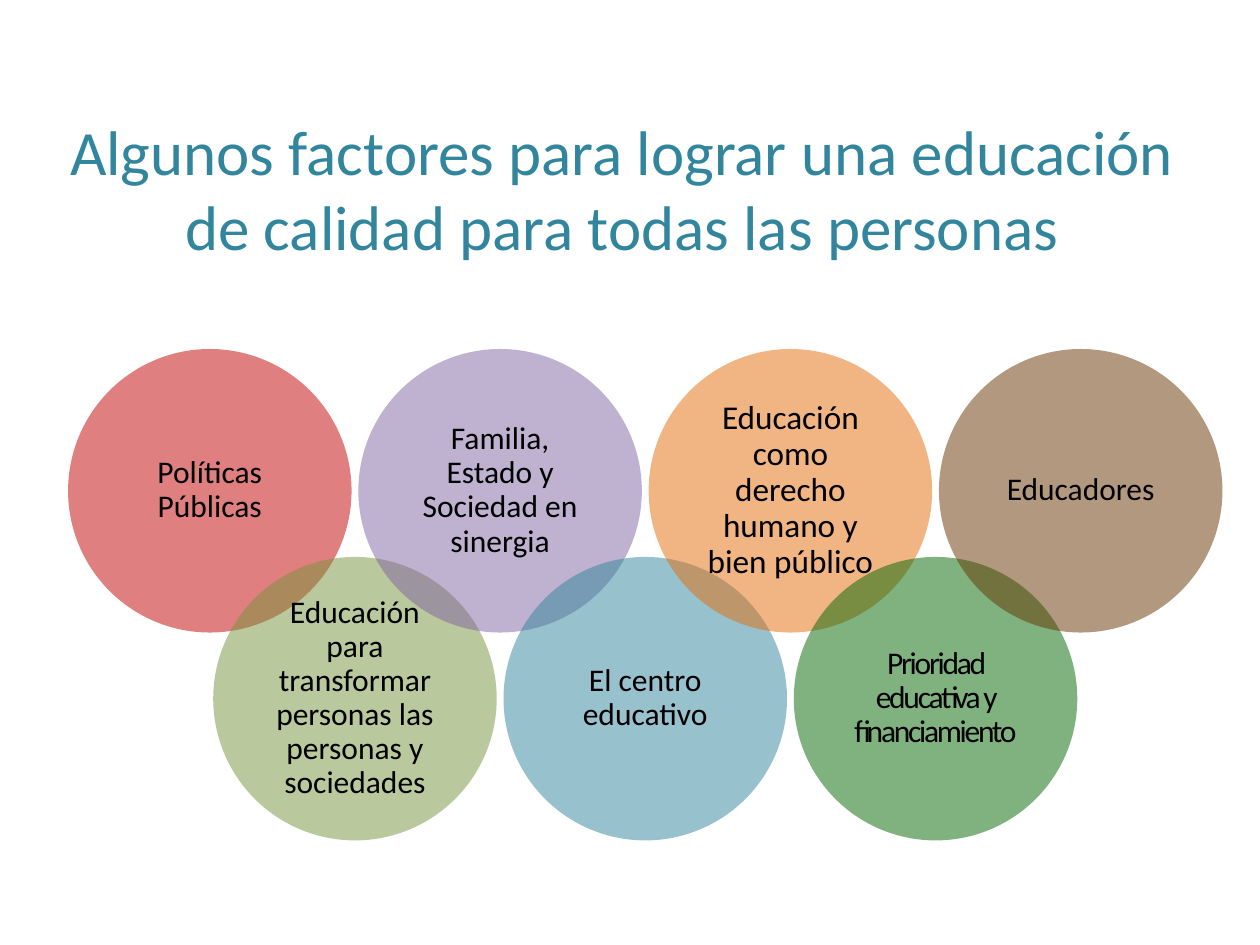
"""Build a slide of overlapping circles naming the factors of quality education."""
from dataclasses import dataclass

from lxml.etree import SubElement
from pptx import Presentation
from pptx.dml.color import RGBColor
from pptx.enum.shapes import MSO_SHAPE
from pptx.enum.text import MSO_ANCHOR, PP_ALIGN
from pptx.oxml.ns import qn
from pptx.slide import Slide
from pptx.text.text import TextFrame
from pptx.util import Inches, Pt

COLORS = {
    "title": "31859C",
    "text": "000000",
    "red": "C00000",
    "olive": "77933C",
    "purple": "8064A2",
    "teal": "31859C",
    "orange": "E46C0A",
    "green": "006600",
    "brown": "663300",
}
DIAMETER = 2.25
FIRST_LEFT = 0.54
STEP = 1.152
ROW_TOPS = (2.77, 4.42)


@dataclass
class Factor:
    label: str
    color: str
    size: float = 18
    inset: float = 0.07
    tracking: float = 0


FACTORS = [
    Factor("Políticas Públicas", "red"),
    Factor("Educación para transformar personas las personas y sociedades", "olive"),
    Factor("Familia, Estado y Sociedad en sinergia", "purple"),
    Factor("El centro educativo", "teal"),
    Factor("Educación como derecho humano y bien público", "orange", size=19, inset=0.08),
    Factor("Prioridad educativa y financiamiento", "green", tracking=-1.3),
    Factor("Educadores", "brown"),
]


def write_text(frame: TextFrame, text: str, *, size: float, color: str,
               inset_x: float = 0.1, inset_y: float = 0.05,
               line_spacing: float = 1.0, tracking: float = 0) -> None:
    """Fill a frame with one centred paragraph."""
    frame.word_wrap = True
    frame.vertical_anchor = MSO_ANCHOR.MIDDLE
    frame.margin_left = frame.margin_right = Inches(inset_x)
    frame.margin_top = frame.margin_bottom = Inches(inset_y)
    paragraph = frame.paragraphs[0]
    paragraph.alignment = PP_ALIGN.CENTER
    paragraph.line_spacing = line_spacing
    run = paragraph.add_run()
    run.text = text
    run.font.name = "Calibri"
    run.font.size = Pt(size)
    run.font.color.rgb = RGBColor.from_string(COLORS[color])
    if tracking:
        run.font._element.set("spc", str(round(tracking * 100)))


def add_factor(slide: Slide, factor: Factor, left: float, top: float) -> None:
    """Draw a half-transparent circle with its label."""
    circle = slide.shapes.add_shape(
        MSO_SHAPE.OVAL, Inches(left), Inches(top), Inches(DIAMETER), Inches(DIAMETER))
    circle.shadow.inherit = False
    circle.line.fill.background()
    circle.fill.solid()
    circle.fill.fore_color.rgb = RGBColor.from_string(COLORS[factor.color])
    tint = circle.fill._xPr.find(qn("a:solidFill")).find(qn("a:srgbClr"))
    SubElement(tint, qn("a:alpha"), val="50000")
    write_text(circle.text_frame, factor.label, size=factor.size, color="text",
               inset_x=factor.inset, inset_y=factor.inset,
               line_spacing=0.9, tracking=factor.tracking)


def main() -> None:
    """Build and save the slide."""
    deck = Presentation()
    deck.slide_width, deck.slide_height = Inches(10), Inches(7.5)
    slide = deck.slides.add_slide(deck.slide_layouts[6])
    title = slide.shapes.add_textbox(Inches(0.16), Inches(0.6), Inches(9.55), Inches(1.78))
    write_text(title.text_frame,
               "Algunos factores para lograr una educación de calidad para todas las personas",
               size=36, color="title")
    for index, factor in enumerate(FACTORS):
        add_factor(slide, factor, FIRST_LEFT + index * STEP, ROW_TOPS[index % 2])
    deck.save("out.pptx")


if __name__ == "__main__":
    main()
